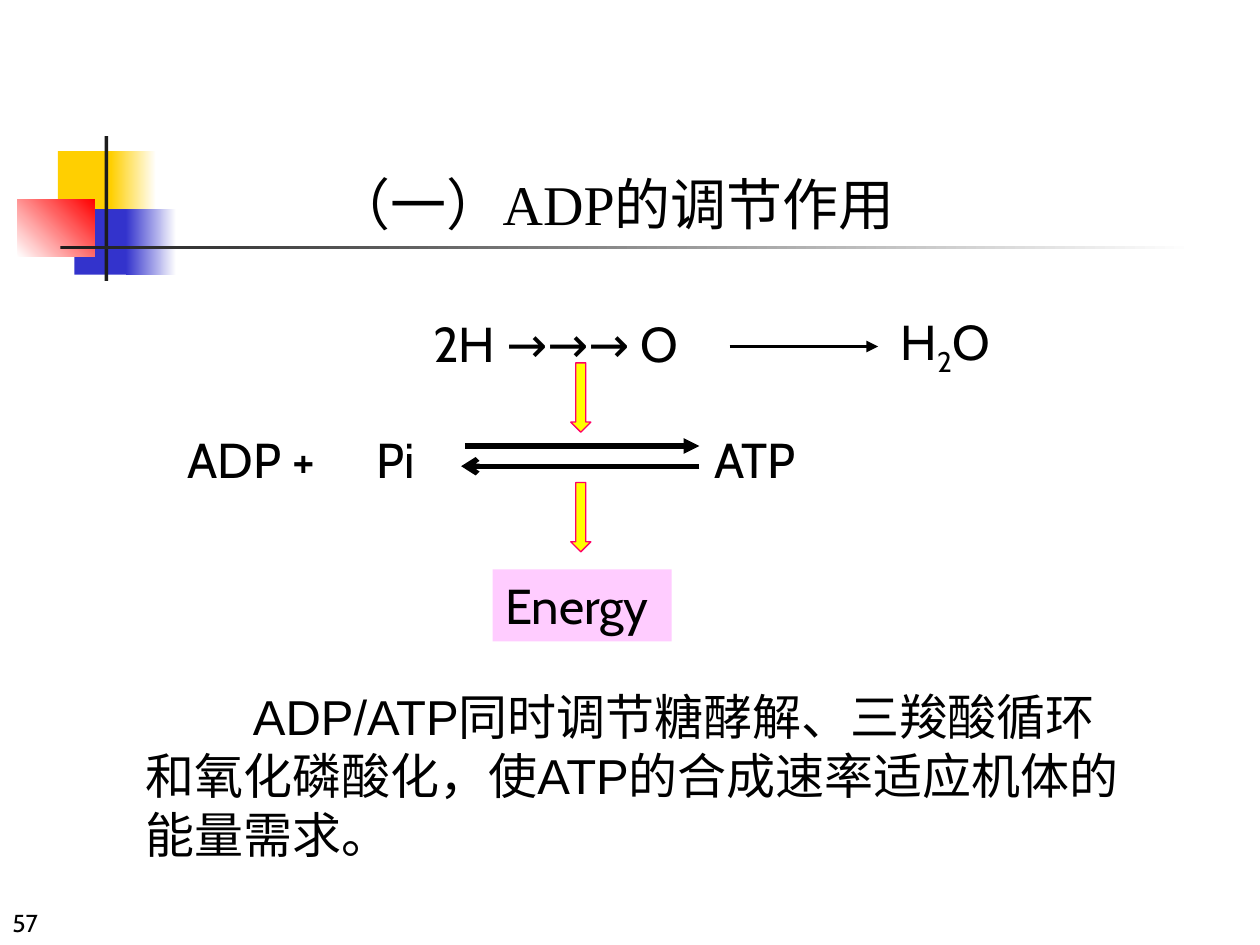
from lxml import etree
from pptx import Presentation
from pptx.dml.color import RGBColor
from pptx.enum.shapes import MSO_CONNECTOR, MSO_SHAPE
from pptx.enum.text import MSO_ANCHOR, PP_ALIGN
from pptx.oxml.ns import qn
from pptx.util import Inches, Pt

RECT, DOWN_ARROW = MSO_SHAPE.RECTANGLE, MSO_SHAPE.DOWN_ARROW
STRAIGHT = MSO_CONNECTOR.STRAIGHT
LEFT, CENTER = PP_ALIGN.LEFT, PP_ALIGN.CENTER
TOP, BOTTOM = MSO_ANCHOR.TOP, MSO_ANCHOR.BOTTOM

COLORS = {
    "black": "000000", "white": "FFFFFF", "ink": "1C1C1C",
    "gold": "FFCF01", "blue": "3333CC", "red": "FF0000",
    "yellow": "FFFF00", "magenta": "FF0066", "pink": "FFCCFF",
}

# Corner motif: box, fill colours (two make a gradient), gradient angle
MOTIF = [
    ((0.46, 1.2, 0.48, 0.52), ["gold"], 0),
    ((0.88, 1.2, 0.36, 0.52), ["gold", "white"], 0),
    ((0.59, 1.66, 0.46, 0.52), ["blue"], 0),
    ((1, 1.66, 0.4, 0.52), ["blue", "white"], 0),
    ((0.14, 1.58, 0.61, 0.46), ["white", "red"], 45),
    ((0.83, 1.08, 0.03, 1.15), ["ink"], 0),
    ((0.48, 1.95, 9, 0.03), ["ink", "white"], 0),
]

# Text: box, pieces (a leading "_" marks a subscript), format
TEXTS = [
    ((1.85, 1.3, 6.06, 0.64), ["（一）ADP的调节作用"],
     {"font": "Times New Roman", "size": 32, "align": CENTER}),
    ((1.39, 3.36, 2.35, 0.57), ["ADP +\tPi"], {"tab": 1.29}),
    ((5.57, 3.36, 1.32, 0.57), ["ATP"], {}),
    ((3.34, 2.44, 2.99, 0.57), ["2H →→→ O"], {}),
    ((7.05, 2.42, 1.02, 0.57), ["H", "_2", "O"], {}),
    ((1.06, 5.4, 8.03, 1.51),
     ["ADP/ATP同时调节糖酵解、三羧酸循环和氧化磷酸化，"
      "使ATP的合成速率适应机体的能量需求。"],
     {"font": "Arial", "indent": 0.85}),
    ((0, 6.99, 0.63, 0.5), ["57"], {"size": 14, "anchor": BOTTOM}),
]

# Reaction lines: from x, to x, y, width in points, arrowhead
REACTIONS = [
    (3.69, 5.55, 3.54, 3, "triangle"),
    (5.79, 6.97, 2.75, 2.25, "triangle"),
    (5.55, 3.66, 3.7, 3, "arrow"),
]

ENERGY_ARROW_TOPS = [2.88, 3.83]
ENERGY_BOX = (3.91, 4.52, 1.42, 0.57)


def rgb(name):
    return RGBColor.from_string(COLORS[name])


def inches(box):
    return [Inches(length) for length in box]


def write(shape, pieces, font="Cabin", size=28, align=LEFT, anchor=TOP,
          indent=0, tab=None):
    frame = shape.text_frame
    frame.word_wrap = True
    frame.vertical_anchor = anchor
    paragraph = frame.paragraphs[0]
    paragraph.alignment = align
    properties = paragraph._p.get_or_add_pPr()
    properties.set("indent", str(Inches(indent)))
    if tab:
        stops = etree.SubElement(properties, qn("a:tabLst"))
        etree.SubElement(stops, qn("a:tab"), pos=str(Inches(tab)), algn="l")
    for piece in pieces:
        run = paragraph.add_run()
        run.text = piece.lstrip("_")
        run.font.name = font
        run.font.size = Pt(size)
        run.font.color.rgb = rgb("black")
        if piece.startswith("_"):
            run.font._element.set("baseline", "-25000")


def add_block(slide, kind, box, fills, angle=0, outline=None):
    block = slide.shapes.add_shape(kind, *inches(box))
    block.shadow.inherit = False
    if len(fills) == 1:
        block.fill.solid()
        block.fill.fore_color.rgb = rgb(fills[0])
    else:
        block.fill.gradient()
        block.fill.gradient_angle = angle
        for stop, color, position in zip(block.fill.gradient_stops, fills, (0, 1)):
            stop.color.rgb = rgb(color)
            stop.position = position
    if outline:
        block.line.color.rgb = rgb(outline)
        block.line.width = Pt(0.75)
    else:
        block.line.fill.background()
    return block


def add_reaction(slide, start, end, y, width, head):
    reaction = slide.shapes.add_connector(STRAIGHT, *inches((start, y, end, y)))
    reaction.line.color.rgb = rgb("black")
    reaction.line.width = Pt(width)
    etree.SubElement(reaction.line._get_or_add_ln(), qn("a:tailEnd"), type=head)
    etree.SubElement(reaction._element.spPr, qn("a:effectLst"))


def main():
    deck = Presentation()
    deck.slide_width, deck.slide_height = Inches(10), Inches(7.5)
    slide = deck.slides.add_slide(deck.slide_layouts[6])

    # Corner motif and title rule
    for box, fills, angle in MOTIF:
        add_block(slide, RECT, box, fills, angle)

    # Title, reaction terms, conclusion and page number
    for box, pieces, style in TEXTS:
        write(slide.shapes.add_textbox(*inches(box)), pieces, **style)

    # Reaction lines
    for reaction in REACTIONS:
        add_reaction(slide, *reaction)

    # Energy flow
    for top in ENERGY_ARROW_TOPS:
        add_block(slide, DOWN_ARROW, (4.53, top, 0.16, 0.55), ["yellow"],
                  outline="magenta")
    energy = add_block(slide, RECT, ENERGY_BOX, ["pink"])
    write(energy, ["Energy"])

    deck.save("out.pptx")


if __name__ == "__main__":
    main()
